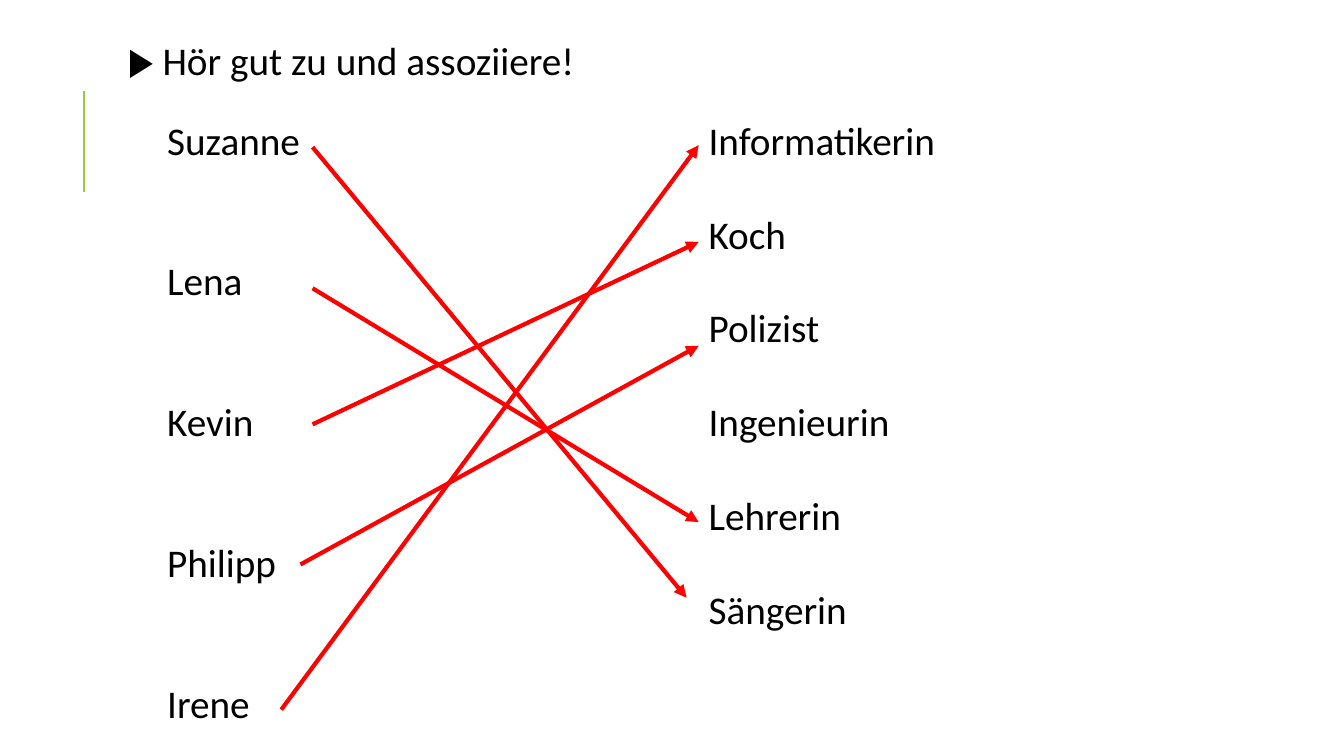
from dataclasses import dataclass

from lxml import etree
from pptx import Presentation
from pptx import util as u
from pptx.dml.color import RGBColor
from pptx.enum import shapes, text
from pptx.oxml.ns import qn


@dataclass(frozen=True)
class Theme:
    font: str = "Calibri"
    size: float = 28
    ink: RGBColor = RGBColor(0, 0, 0)
    accent: RGBColor = RGBColor(0x99, 0xCB, 0x38)
    match: RGBColor = RGBColor(0xFF, 0, 0)
    thin: float = 1.5
    thick: float = 3


THEME = Theme()
ROW = 33.5  # height of one text line in points
NAMES = ["Suzanne", "Lena", "Kevin", "Philipp", "Irene"]
JOBS = ["Informatikerin", "Koch", "Polizist", "Ingenieurin", "Lehrerin", "Sängerin"]
# Arrow from each name to its job, measured from the top left of the exercise
MATCHES = [
    (154, 36, 525, 483),
    (154, 176, 537, 408),
    (154, 311, 537, 130),
    (142, 450, 537, 233),
    (123, 594, 537, 34),
]


def px(n):
    """100 px make one inch."""
    return u.Emu(n * 9144)


def add_text(slide, box, lines, skip=0):
    """Stack lines, leaving the height of `skip` rows between them."""
    frame = slide.shapes.add_textbox(*map(px, box)).text_frame
    frame.word_wrap = True
    for i, line in enumerate(lines):
        para = frame.paragraphs[0] if i == 0 else frame.add_paragraph()
        para.text = line
        para.space_before = u.Pt(skip * ROW if i else 0)
        para.font.name = THEME.font
        para.font.size = u.Pt(THEME.size)
        para.font.color.rgb = THEME.ink
    frame.auto_size = text.MSO_AUTO_SIZE.SHAPE_TO_FIT_TEXT


def add_line(slide, ends, color, width, arrow=False):
    line = slide.shapes.add_connector(shapes.MSO_CONNECTOR.STRAIGHT, *map(px, ends))
    line.line.color.rgb = color
    line.line.width = u.Pt(width)
    if arrow:
        etree.SubElement(line.line._get_or_add_ln(), qn("a:tailEnd"), type="triangle")
    etree.SubElement(line._element.spPr, qn("a:effectLst"))


def add_head(slide, box):
    x, y, w, h = box
    # Accent rule to the left of the heading
    add_line(slide, (x - 34, y + 159, x - 34, y + 59), THEME.accent, THEME.thin)
    add_text(slide, (x, y, w, h), ["▶ Hör gut zu und assoziiere!"])


def add_task(slide, box):
    x, y, w, h = box
    col = 252
    # Names on the left, jobs on the right
    add_text(slide, (x, y, col, h), NAMES, skip=2)
    add_text(slide, (x + w - col, y, col, 528), JOBS, skip=1)
    # Arrows joining each name to its job
    for x1, y1, x2, y2 in MATCHES:
        ends = (x + x1, y + y1, x + x2, y + y2)
        add_line(slide, ends, THEME.match, THEME.thick, arrow=True)


def main():
    deck = Presentation()
    deck.slide_width, deck.slide_height = px(1333), px(750)
    slide = deck.slides.add_slide(deck.slide_layouts[6])
    add_head(slide, (117, 31, 564, 57))
    add_task(slide, (156, 110, 789, 623))
    deck.save("out.pptx")


if __name__ == "__main__":
    main()
